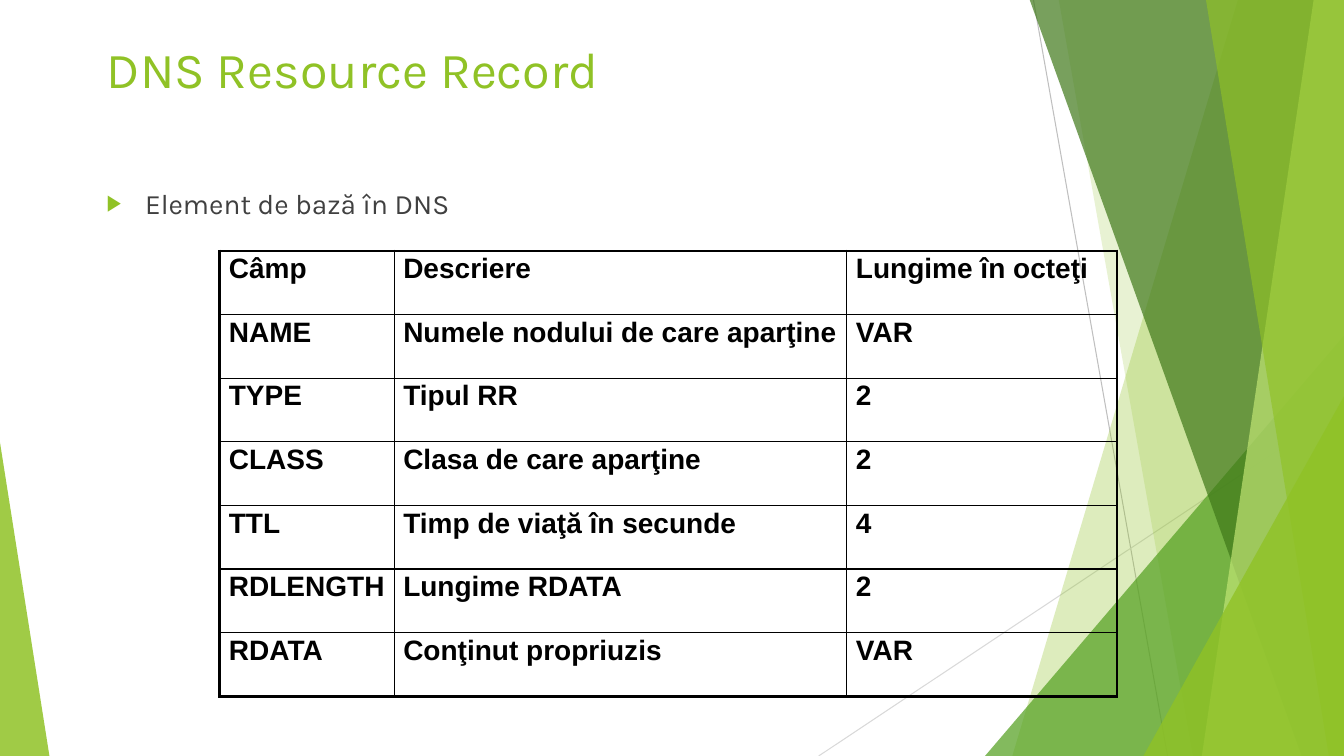
from collections import namedtuple

from lxml.etree import SubElement
from pptx import Presentation
from pptx.dml.color import RGBColor
from pptx.enum.shapes import MSO_CONNECTOR, MSO_SHAPE
from pptx.enum.text import MSO_ANCHOR
from pptx.oxml.ns import qn
from pptx.util import Inches, Pt

LIME = RGBColor(0x90, 0xC2, 0x26)
GREEN = RGBColor(0x54, 0xA0, 0x21)
FOREST = RGBColor(0x3F, 0x78, 0x19)
PALE_LIME = RGBColor(0xC0, 0xE4, 0x74)
SILVER = RGBColor(0xBF, 0xBF, 0xBF)
LIGHT_SILVER = RGBColor(0xD9, 0xD9, 0xD9)
CHARCOAL = RGBColor(0x40, 0x40, 0x40)
BLACK = RGBColor(0, 0, 0)

Box = namedtuple("Box", "left top width height")
PAGE = Box(0, 0, 13.33, 7.5)
TITLE = Box(0.96, 0.33, 11.59, 0.92)
BODY = Box(0.96, 1.8, 5.68, 4.42)
TABLE = Box(2.18, 2.49, 8.9, 4.42)

COLUMN_WIDTHS = [1.73, 4.49, 2.68]
RECORD_FIELDS = [
    ("Câmp", "Descriere", "Lungime în octeţi"),
    ("NAME", "Numele nodului de care aparţine", "VAR"),
    ("TYPE", "Tipul RR", "2"),
    ("CLASS", "Clasa de care aparţine", "2"),
    ("TTL", "Timp de viaţă în secunde", "4"),
    ("RDLENGTH", "Lungime RDATA", "2"),
    ("RDATA", "Conţinut propriuzis", "VAR"),
]


def inches(box):
    return [Inches(length) for length in box]


def write(frame, text, font="Karla", size=20, color=BLACK, bold=False):
    para = frame.paragraphs[0]
    span = para.add_run()
    span.text = text
    span.font.name = font
    span.font.size = Pt(size)
    span.font.color.rgb = color
    span.font.bold = bold
    return para


def paint(shape, color, opacity):
    shape.shadow.inherit = False
    shape.line.fill.background()
    shape.fill.solid()
    shape.fill.fore_color.rgb = color
    tint = shape.element.xpath("./p:spPr/a:solidFill/a:srgbClr")[0]
    SubElement(tint, qn("a:alpha"), val=str(opacity * 1000))


def add_ray(page, start, end, color):
    ray = page.shapes.add_connector(
        MSO_CONNECTOR.STRAIGHT, *inches(start), *inches(end))
    ray.line.color.rgb = color
    ray.line.width = Pt(0.75)
    SubElement(ray.element.spPr, qn("a:effectLst"))


def add_blade(page, box, top_x, bottom_x, color, opacity):
    right, bottom = box.left + box.width, box.top + box.height
    top = box.top - 0.01
    outline = page.shapes.build_freeform(Inches(top_x), Inches(top))
    corners = [(right, top), (right, bottom), (bottom_x, bottom)]
    outline.add_line_segments([inches(corner) for corner in corners], close=True)
    paint(outline.convert_to_shape(), color, opacity)


def add_triangle(page, box, apex, color, opacity):
    triangle = page.shapes.add_shape(MSO_SHAPE.ISOSCELES_TRIANGLE, *inches(box))
    triangle.adjustments[0] = apex
    paint(triangle, color, opacity)


def add_corner(page, box, width, height, color, opacity):
    corner = Box(box.left + box.width - width,
                 box.top + box.height - height, width, height)
    add_triangle(page, corner, 1, color, opacity)


def add_decoration(page, box):
    right, bottom = box.left + box.width, box.top + box.height
    add_ray(page, (10.25, box.top), (11.58, bottom), SILVER)
    add_ray(page, (right, 4.03), (8.12, bottom), LIGHT_SILVER)
    add_blade(page, box, 12.28, 10.04, LIME, 30)
    add_blade(page, box, 10.5, 11.83, LIME, 20)
    add_corner(page, box, 3.56, 4.17, GREEN, 72)
    add_blade(page, box, 10.21, 12.91, FOREST, 70)
    add_blade(page, box, 13.03, 11.92, PALE_LIME, 70)
    add_blade(page, box, 11.96, 13.18, LIME, 65)
    add_corner(page, box, 1.99, 3.57, LIME, 80)
    add_triangle(page, Box(box.left, bottom - 3.11, 0.49, 3.11), 0, LIME, 85)


def add_title(page, box, text):
    title = page.shapes.title
    title.left, title.top, title.width, title.height = inches(box)
    title.text_frame.vertical_anchor = MSO_ANCHOR.TOP
    para = write(title.text_frame, text, size=36, color=LIME)
    para.alignment = 1
    page.shapes.element.append(title.element)


def add_bullet(page, box, text):
    frame = page.shapes.add_textbox(*inches(box)).text_frame
    frame.word_wrap = True
    para = write(frame, text, color=CHARCOAL)
    para.space_before = Pt(10)
    properties = para._p.get_or_add_pPr()
    properties.set("marL", str(Inches(0.38)))
    properties.set("indent", str(-Inches(0.38)))
    bullet_color = SubElement(properties, qn("a:buClr"))
    SubElement(bullet_color, qn("a:srgbClr"), val=str(LIME))
    SubElement(properties, qn("a:buSzPct"), val="80000")
    SubElement(properties, qn("a:buFont"), typeface="Arial")
    SubElement(properties, qn("a:buChar"), char="▶")


def add_border(cell, side, width):
    border = SubElement(cell._tc.get_or_add_tcPr(), qn(f"a:ln{side}"),
                        w=str(Pt(width)))
    fill = SubElement(border, qn("a:solidFill"))
    SubElement(fill, qn("a:srgbClr"), val=str(BLACK))


def fill_cell(cell, text, outer_sides):
    cell.margin_left = cell.margin_right = Inches(0.09)
    cell.margin_top = cell.margin_bottom = Inches(0.04)
    for side in "LRTB":
        add_border(cell, side, 2.25 if side in outer_sides else 1)
    cell.fill.background()
    para = write(cell.text_frame, text, font="Arial", bold=True)
    para.line_spacing = 0.95
    space = SubElement(para._p.get_or_add_pPr(), qn("a:spcBef"))
    SubElement(space, qn("a:spcPct"), val="50000")


def add_field_table(page, box, rows, widths):
    table = page.shapes.add_table(len(rows), len(widths), *inches(box)).table
    table.first_row = table.horz_banding = False
    for column, width in zip(table.columns, widths):
        column.width = Inches(width)
    for r, texts in enumerate(rows):
        table.rows[r].height = Inches(box.height / len(rows))
        for c, text in enumerate(texts):
            edges = {"L": c == 0, "R": c == len(widths) - 1,
                     "T": r == 0, "B": r == len(rows) - 1}
            outer_sides = [side for side in edges if edges[side]]
            fill_cell(table.cell(r, c), text, outer_sides)


def main():
    deck = Presentation()
    deck.slide_width = Inches(PAGE.width)
    deck.slide_height = Inches(PAGE.height)
    page = deck.slides.add_slide(deck.slide_layouts.get_by_name("Title Only"))
    add_decoration(page, PAGE)
    add_title(page, TITLE, "DNS Resource Record")
    add_bullet(page, BODY, "Element de bază în DNS")
    add_field_table(page, TABLE, RECORD_FIELDS, COLUMN_WIDTHS)
    deck.save("out.pptx")


if __name__ == "__main__":
    main()
